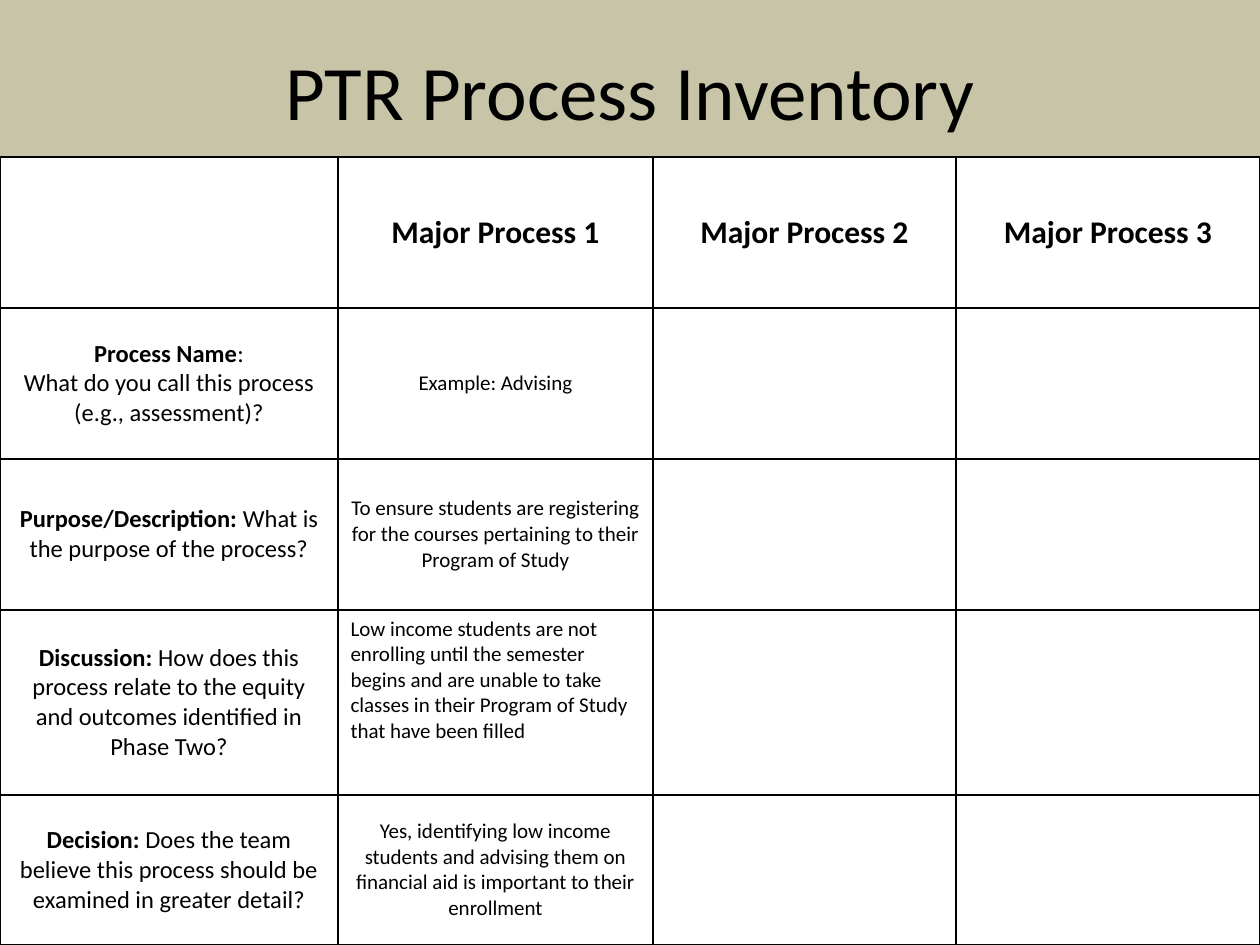
import pptx
import pptx.util
import pptx.dml.color
import pptx.enum.shapes
import pptx.enum.text
import pptx.oxml
from lxml import etree

# Content: each cell is a list of paragraphs, each paragraph a list of (text, bold)
TITLE = "PTR Process Inventory"
PROCESSES = ["Major Process 1", "Major Process 2", "Major Process 3"]
QUESTIONS = [
    ([[("Process Name", True), (":", False)],
      [("What do you call this process (e.g., assessment)?", False)]],
     "Example: Advising"),
    ([[("Purpose/Description: ", True),
       ("What is the purpose of the process?", False)]],
     "To ensure students are registering for the courses pertaining to "
     "their Program of Study"),
    ([[("Discussion: ", True),
       ("How does this process relate to the equity and outcomes identified "
        "in Phase Two?", False)]],
     "Low income students are not enrolling until the semester begins and are "
     "unable to take classes in their Program of Study that have been filled"),
    ([[("Decision: ", True),
       ("Does the team believe this process should be examined in greater "
        "detail?", False)]],
     "Yes, identifying low income students and advising them on financial aid "
     "is important to their enrollment"),
]
TOP_LEFT_ANSWER = (3, 1)

# Theme and geometry in px
THEME = {
    "font": "Calibri", "text": "000000", "band": "C8C4A8", "cell": "FFFFFF",
    "border": "000000", "border_pt": 1,
    "title": 44, "header": 18, "question": 14, "answer": 12,
}
WIDTH, HEIGHT, BAND_HEIGHT = 1260, 945, 157
TITLE_BOX = (94, 32, 1072, 116)
COLUMNS = [338, 315, 303, 304]
ROWS = [151, 151, 151, 185, 150]

CENTER = pptx.enum.text.PP_ALIGN.CENTER
LEFT = pptx.enum.text.PP_ALIGN.LEFT
MIDDLE = pptx.enum.text.MSO_ANCHOR.MIDDLE
TOP = pptx.enum.text.MSO_ANCHOR.TOP


def px(length):
    return pptx.util.Emu(round(length * 914400 / 126))


def rgb(name):
    return pptx.dml.color.RGBColor.from_string(THEME[name])


def paint(part, colour):
    part.fill.solid()
    part.fill.fore_color.rgb = rgb(colour)


def write(frame, paragraphs, size, align=CENTER):
    for index, runs in enumerate(paragraphs):
        paragraph = frame.add_paragraph() if index else frame.paragraphs[0]
        paragraph.alignment = align
        for text, bold in runs:
            run = paragraph.add_run()
            run.text = text
            style = {"name": THEME["font"], "bold": bold,
                     "size": pptx.util.Pt(THEME[size])}
            for key, value in style.items():
                setattr(run.font, key, value)
            run.font.color.rgb = rgb("text")


def add_borders(cell):
    properties = cell._tc.get_or_add_tcPr()
    width = pptx.util.Pt(THEME["border_pt"])
    for position, side in enumerate(("lnL", "lnR", "lnT", "lnB")):
        line = etree.Element(pptx.oxml.ns.qn(f"a:{side}"), w=str(int(width)))
        fill = etree.SubElement(line, pptx.oxml.ns.qn("a:solidFill"))
        etree.SubElement(fill, pptx.oxml.ns.qn("a:srgbClr"), val=THEME["border"])
        properties.insert(position, line)


presentation = pptx.Presentation()
presentation.slide_width, presentation.slide_height = px(WIDTH), px(HEIGHT)
slide = presentation.slides.add_slide(presentation.slide_layouts[6])

# Title band
band = slide.shapes.add_shape(pptx.enum.shapes.MSO_SHAPE.RECTANGLE,
                              0, 0, px(WIDTH), px(BAND_HEIGHT))
band.shadow.inherit = False
paint(band, "band")
band.line.fill.background()

title = slide.shapes.add_textbox(*map(px, TITLE_BOX)).text_frame
title.word_wrap = True
title.vertical_anchor = MIDDLE
write(title, [[(TITLE, False)]], "title")

# Inventory table
inventory = slide.shapes.add_table(len(ROWS), len(COLUMNS), 0, px(BAND_HEIGHT),
                                   px(WIDTH), px(sum(ROWS))).table
for column, width in zip(inventory.columns, COLUMNS):
    column.width = px(width)
for row, height in zip(inventory.rows, ROWS):
    row.height = px(height)
for cell in inventory.iter_cells():
    paint(cell, "cell")
    add_borders(cell)
    cell.vertical_anchor = MIDDLE

# Table text
for column, process in enumerate(PROCESSES, 1):
    write(inventory.cell(0, column).text_frame, [[(process, True)]], "header")
for row, (question, answer) in enumerate(QUESTIONS, 1):
    write(inventory.cell(row, 0).text_frame, question, "question")
    at_top = (row, 1) == TOP_LEFT_ANSWER
    answer_cell = inventory.cell(row, 1)
    answer_cell.vertical_anchor = TOP if at_top else MIDDLE
    write(answer_cell.text_frame, [[(answer, False)]], "answer",
          LEFT if at_top else CENTER)

presentation.save("out.pptx")
